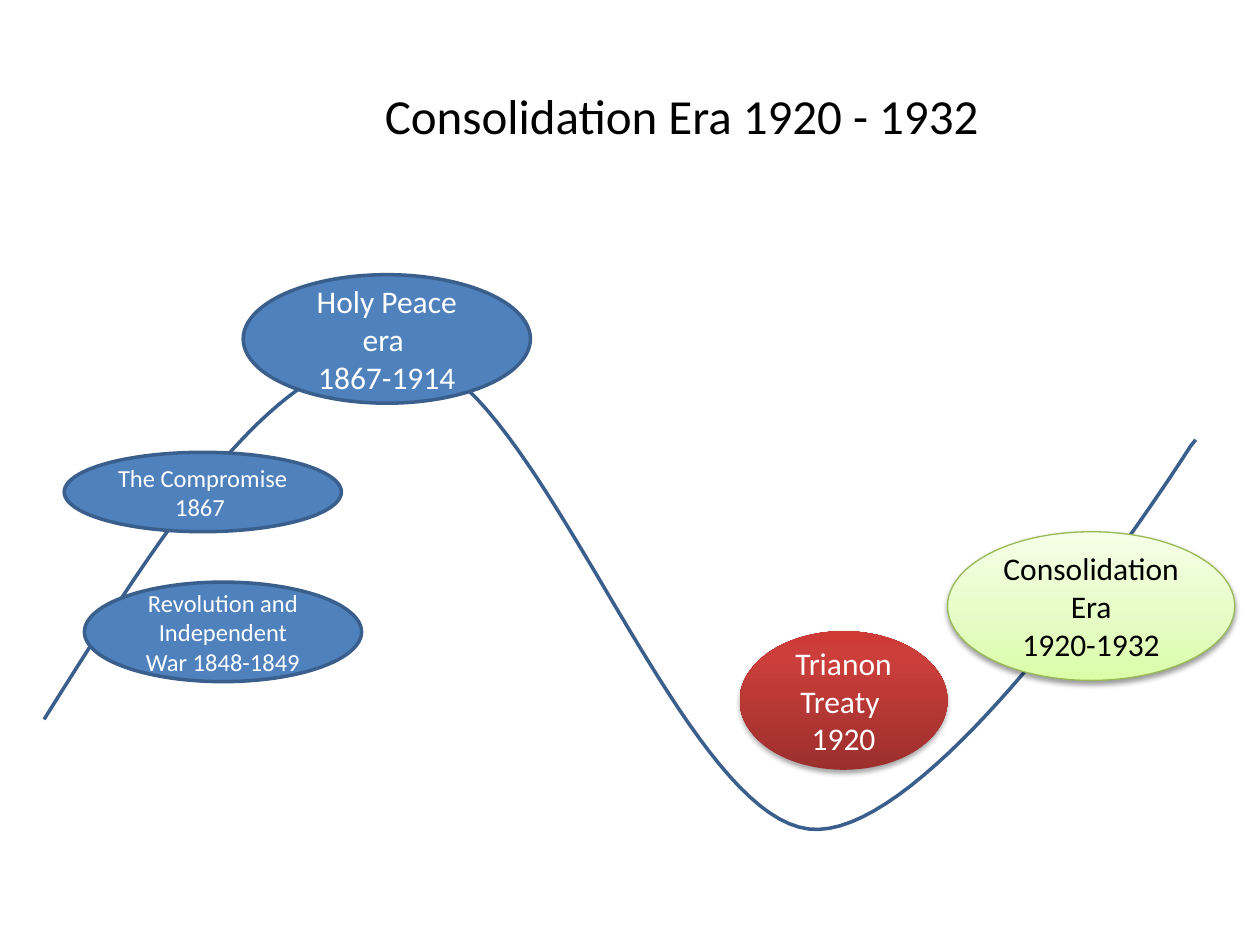
from lxml.etree import SubElement
from pptx import Presentation
from pptx.dml.color import RGBColor
from pptx.enum.shapes import MSO_SHAPE
from pptx.enum.text import MSO_ANCHOR, PP_ALIGN
from pptx.oxml.ns import qn
from pptx.util import Inches, Pt

COLS, ROWS = 100, 75
HUES = {
    "black": "000000", "white": "FFFFFF", "blue": "4F81BD", "navy": "3A5F8C",
    "rust": "9C2F2D", "red": "CB3E3A", "rose": "CE3B37",
    "lime": "DAFDA7", "mint": "E4FCC2", "pale": "F5FFE7", "moss": "98B955",
}
TITLE = ("Consolidation Era 1920 - 1932", (9.1, 2.9, 90, 12.5))
START = (3.5, 57.1)
BENDS = [
    ((13, 42), (22.4, 26.8), (32.5, 28.2)),
    ((42.6, 29.7), (53.8, 64.6), (64.2, 65.8)),
    ((74.5, 67), (94.5, 35.4), (94.5, 35.4)),
]
END = (94.9, 34.9)
STEPS = 40
STYLES = {
    "past": {"fill": "blue", "line": ("navy", 2), "text": "white"},
    "loss": {"stops": [(0, "rust"), (80, "red"), (100, "rose")],
             "shade": (35, 3.1, 1.8), "text": "white"},
    "calm": {"stops": [(0, "lime"), (35, "mint"), (100, "pale")],
             "line": ("moss", 0.75), "shade": (38, 3.1, 1.6), "text": "black"},
}
ERAS = [
    (["Revolution and Independent War 1848-1849"], (6.7, 46.2, 22, 7.9), 14, "past"),
    (["The Compromise", "1867 "], (5.1, 35.9, 22, 6.3), 14, "past"),
    (["Holy Peace era ", "1867-1914"], (19.3, 21.8, 22.8, 10.2), 18, "past"),
    (["Trianon Treaty ", "1920"], (58.7, 50.1, 16.5, 11), 18, "loss"),
    (["Consolidation Era", "1920-1932"], (75.2, 42.2, 22.8, 11.8), 18, "calm"),
]

deck = Presentation()
deck.slide_width, deck.slide_height = Inches(10), Inches(7.5)
slide = deck.slides.add_slide(deck.slide_layouts[5])
shapes = slide.shapes


def hue(name):
    return RGBColor.from_string(HUES[name])


def spot(x, y):
    return int(deck.slide_width * x / COLS), int(deck.slide_height * y / ROWS)


def area(box):
    return spot(*box[:2]) + spot(*box[2:])


def write(shape, lines, size, tone):
    frame = shape.text_frame
    frame.text = "\n".join(lines)
    frame.word_wrap = True
    frame.vertical_anchor = MSO_ANCHOR.MIDDLE
    for para in frame.paragraphs:
        para.alignment = PP_ALIGN.CENTER
        look = {"name": "Calibri", "size": Pt(size)}
        for run in para.runs:
            for key, val in look.items():
                setattr(run.font, key, val)
            run.font.color.rgb = hue(tone)


def stroke(shape, name, width):
    shape.line.color.rgb = hue(name)
    shape.line.width = Pt(width)


def tint(parent, name):
    return SubElement(parent, qn("a:srgbClr"), val=HUES[name])


def blend(shape, stops):
    shape.fill.gradient()
    shape.fill.gradient_angle = 90
    ramp = shape.element.spPr.find(".//" + qn("a:gsLst"))
    for old in list(ramp):
        ramp.remove(old)
    for pos, name in stops:
        tint(SubElement(ramp, qn("a:gs"), pos=str(pos * 1000)), name)


def shade(shape, alpha, blur, drop):
    list_ = shape.element.spPr.find(qn("a:effectLst"))
    cast = SubElement(list_, qn("a:outerShdw"), blurRad=str(Pt(blur)),
                      dist=str(Pt(drop)), dir="5400000", rotWithShape="0")
    SubElement(tint(cast, "black"), qn("a:alpha"), val=str(alpha * 1000))


def trace(start, bends):
    for one, two, end in bends:
        for step in range(1, STEPS + 1):
            t = step / STEPS
            u = 1 - t
            parts = (u ** 3, 3 * u * u * t, 3 * u * t * t, t ** 3)
            knots = (start, one, two, end)
            yield tuple(sum(p * k[i] for p, k in zip(parts, knots)) for i in (0, 1))
        start = end


head = shapes.title
head.left, head.top, head.width, head.height = area(TITLE[1])
write(head, [TITLE[0]], 28, "black")

path = shapes.build_freeform(*spot(*START))
path.add_line_segments([spot(*p) for p in [*trace(START, BENDS), END]], close=False)
curve = path.convert_to_shape()
curve.fill.background()
curve.shadow.inherit = False
stroke(curve, "navy", 2)

for lines, box, size, kind in ERAS:
    style = STYLES[kind]
    oval = shapes.add_shape(MSO_SHAPE.OVAL, *area(box))
    oval.shadow.inherit = False
    if "stops" in style:
        blend(oval, style["stops"])
    else:
        oval.fill.solid()
        oval.fill.fore_color.rgb = hue(style["fill"])
    if "line" in style:
        stroke(oval, *style["line"])
    else:
        oval.line.fill.background()
    if "shade" in style:
        shade(oval, *style["shade"])
    write(oval, lines, size, style["text"])

deck.save("out.pptx")
